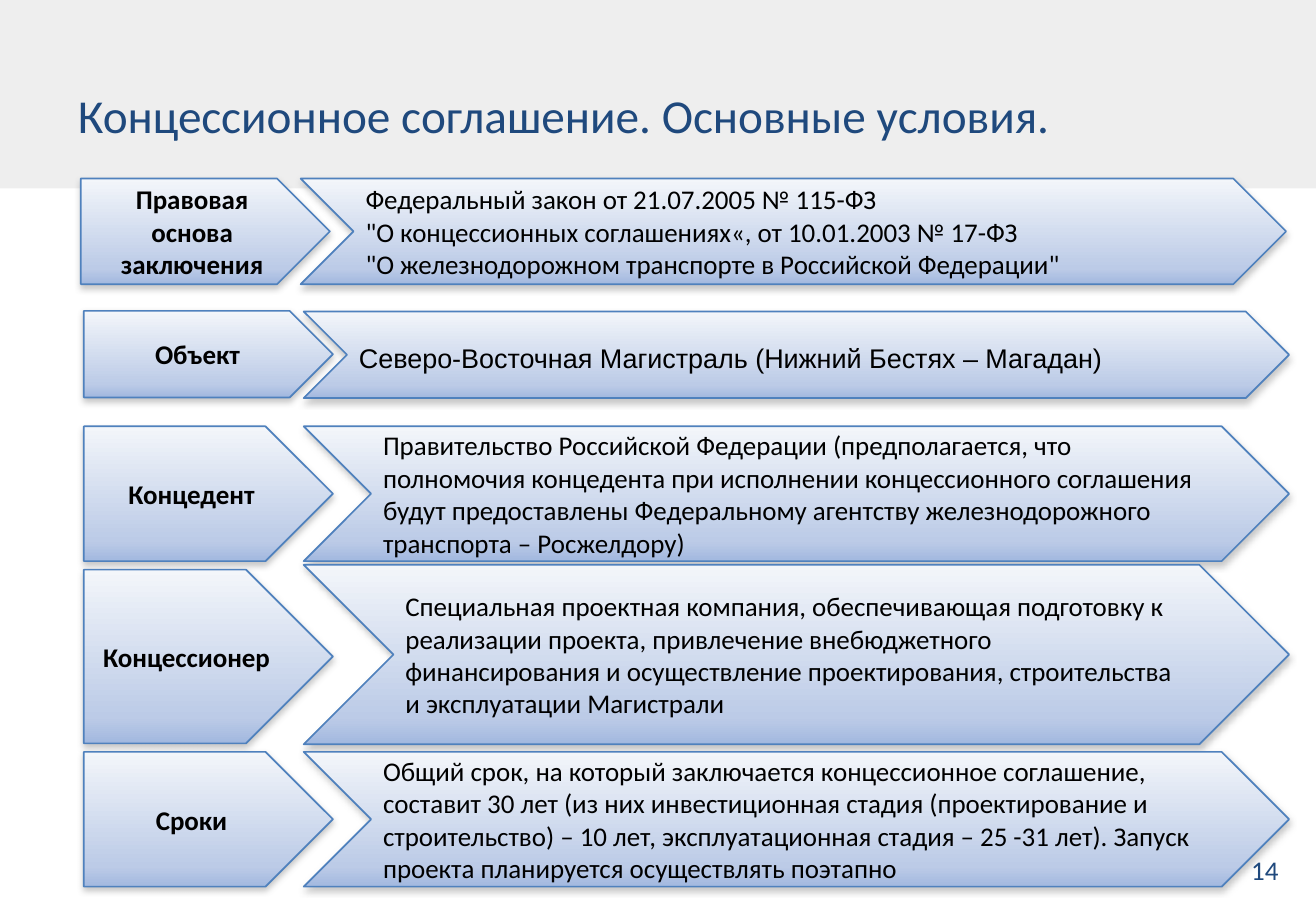
import pptx
import pptx.dml.color
import pptx.enum.shapes
import pptx.enum.text
import pptx.oxml
import pptx.oxml.ns
import pptx.util

RGB = pptx.dml.color.RGBColor
Pt = pptx.util.Pt
KIND = pptx.enum.shapes.MSO_SHAPE
ALIGN = pptx.enum.text.PP_ALIGN
ANCHOR = pptx.enum.text.MSO_ANCHOR

GREY = RGB(0xEE, 0xEE, 0xEE)
WHITE = RGB(0xFF, 0xFF, 0xFF)
BLACK = RGB(0, 0, 0)
NAVY = RGB(0x1F, 0x49, 0x7D)
BLUE = RGB(0x4F, 0x81, 0xBD)
SHADE = RGB(0x80, 0x80, 0x80)
STOPS = [
    (0, RGB(0xF3, 0xF6, 0xFA)),
    (85, RGB(0xBC, 0xCB, 0xE7)),
    (100, RGB(0xA2, 0xB8, 0xDF)),
]

# Places are in a grid of 100 columns by 100 rows.
LABEL_X, LABEL_W = 6.37, 18.93
BODY_X, BODY_W = 23.08, 74.88

# Label, label top and height, body top and height, column shift, body format, body text
ROWS = [
    ("Правовая основа заключения", (19.6, 11.6), (19.6, 11.6), -0.23, {},
     ["Федеральный закон от 21.07.2005 № 115-ФЗ",
      "\"О концессионных соглашениях«, от 10.01.2003 № 17-ФЗ",
      "\"О железнодорожном транспорте в Российской Федерации\""]),
    ("Объект", (34.13, 9.5), (34.2, 9.5), 0,
     {"font": "Arial", "lead": 1.2, "after": 2},
     ["Северо-Восточная Магистраль (Нижний Бестях – Магадан)"]),
    ("Концедент", (46.8, 14.8), (46.8, 14.8), 0, {},
     ["Правительство Российской Федерации (предполагается, что полномочия "
      "концедента при исполнении концессионного соглашения будут предоставлены "
      "Федеральному агентству железнодорожного транспорта – Росжелдору)"]),
    ("Концессионер", (62.53, 19.07), (62, 19.7), 0, {},
     ["Специальная проектная компания, обеспечивающая подготовку к реализации "
      "проекта, привлечение внебюджетного финансирования и осуществление "
      "проектирования, строительства и эксплуатации Магистрали"]),
    ("Сроки", (82.53, 14.8), (82.53, 14.8), 0, {},
     ["Общий срок, на который заключается концессионное соглашение, составит "
      "30 лет (из них инвестиционная стадия (проектирование и строительство) – "
      "10 лет, эксплуатационная стадия – 25 -31 лет). Запуск проекта "
      "планируется осуществлять поэтапно"]),
]


def write(shape, lines, size=16, font="Calibri", color=BLACK, bold=False,
          align=ALIGN.LEFT, anchor=ANCHOR.MIDDLE, lead=None, after=None):
    """Fill a shape with one paragraph per line, all in one format."""
    frame = shape.text_frame
    frame.word_wrap = True
    frame.vertical_anchor = anchor
    frame.text = "\n".join(lines)
    for para in frame.paragraphs:
        para.alignment = align
        if lead:
            para.line_spacing = lead
        if after:
            para.space_after = Pt(after)
        for run in para.runs:
            run.font.size = Pt(size)
            run.font.name = font
            run.font.bold = bold
            run.font.color.rgb = color


def parse(xml):
    return pptx.oxml.parse_xml(
        xml.replace(">", " " + pptx.oxml.ns.nsdecls("a") + ">", 1))


class Deck:
    """Holds the style and the current slide; all places are grid units."""

    def __init__(self, width, height):
        self.show = pptx.Presentation()
        self.show.slide_width = pptx.util.Inches(width)
        self.show.slide_height = pptx.util.Inches(height)
        self.slide = self.show.slides.add_slide(self.show.slide_layouts[5])
        self.slide.background.fill.solid()
        self.slide.background.fill.fore_color.rgb = GREY

    def place(self, left, top, width, height):
        col = self.show.slide_width / 100
        row = self.show.slide_height / 100
        return [round(n) for n in
                (left * col, top * row, width * col, height * row)]

    def title(self, text, *box):
        shape = self.slide.shapes.title
        shape.left, shape.top, shape.width, shape.height = self.place(*box)
        write(shape, [text], size=28, color=NAVY, anchor=ANCHOR.BOTTOM)

    def panel(self, *box):
        shape = self.slide.shapes.add_shape(KIND.RECTANGLE, *self.place(*box))
        shape.shadow.inherit = False
        shape.fill.solid()
        shape.fill.fore_color.rgb = WHITE
        shape.line.fill.background()

    def arrow(self, kind, lines, *box, **style):
        shape = self.slide.shapes.add_shape(kind, *self.place(*box))
        shape.line.color.rgb = BLUE
        shape.line.width = Pt(1)
        self.blend(shape)
        self.shadow(shape)
        write(shape, lines, **style)

    def blend(self, shape):
        """Give a shape the three-stop gradient, light at the top."""
        shape.fill.gradient()
        shape.fill.gradient_angle = 270
        stops = shape._element.spPr.find(".//" + pptx.oxml.ns.qn("a:gsLst"))
        stops.clear()
        for share, color in STOPS:
            stops.append(parse(f'<a:gs pos="{share * 1000}">'
                               f'<a:srgbClr val="{color}"/></a:gs>'))

    def shadow(self, shape):
        shape.shadow.inherit = False
        effects = shape._element.spPr.find(pptx.oxml.ns.qn("a:effectLst"))
        effects.append(parse(
            f'<a:outerShdw blurRad="{Pt(4)}" dist="{Pt(2)}" dir="5400000" '
            f'rotWithShape="0"><a:srgbClr val="{SHADE}">'
            '<a:alpha val="43000"/></a:srgbClr></a:outerShdw>'))

    def label(self, text, *box, **style):
        write(self.slide.shapes.add_textbox(*self.place(*box)), [text], **style)


def main():
    deck = Deck(10.83, 7.5)
    deck.panel(0, 20.67, 100, 79.33)
    deck.title("Концессионное соглашение. Основные условия.", 5, 5.2, 90, 11.2)
    for name, (top, high), (body_top, body_high), shift, style, lines in ROWS:
        deck.arrow(KIND.PENTAGON, [name], LABEL_X + shift, top, LABEL_W, high,
                   bold=True, align=ALIGN.CENTER)
        deck.arrow(KIND.CHEVRON, lines, BODY_X + shift, body_top, BODY_W,
                   body_high, **style)
    deck.label("14", 74.7, 93.07, 23.36, 6.93, color=NAVY,
               align=ALIGN.RIGHT, anchor=ANCHOR.TOP)
    deck.show.save("out.pptx")


if __name__ == "__main__":
    main()
